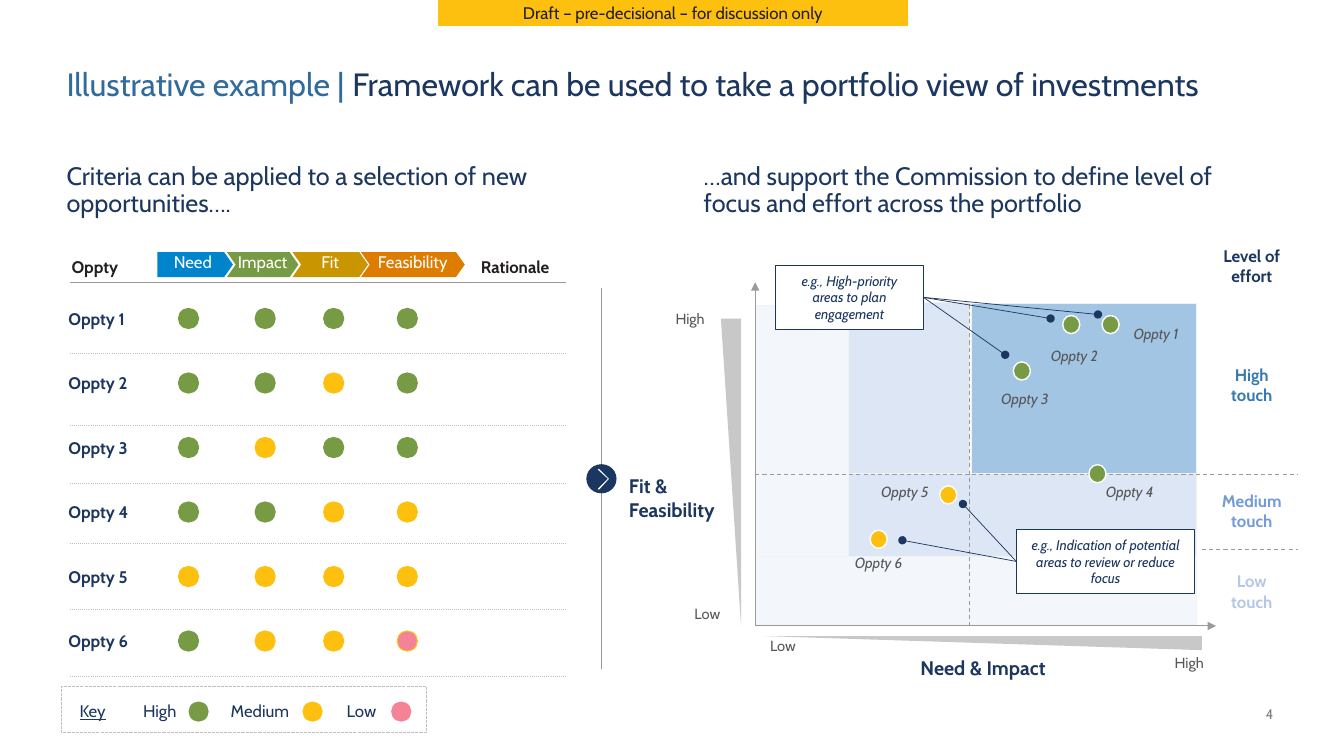
from lxml.etree import SubElement
from pptx import Presentation
from pptx.dml.color import RGBColor
from pptx.enum.dml import MSO_LINE
from pptx.enum.shapes import MSO_CONNECTOR, MSO_SHAPE as SHAPE
from pptx.enum.text import MSO_ANCHOR as ANCHOR, MSO_AUTO_SIZE, PP_ALIGN as ALIGN
from pptx.oxml import parse_xml
from pptx.oxml.ns import nsdecls, qn
from pptx.util import Pt

PX = 9144  # 100 px to the inch
FONT = "Cabin"
NAVY = RGBColor(0x1B, 0x36, 0x5F)
BLUE = RGBColor(0x30, 0x6B, 0x9C)
INK = RGBColor(0x23, 0x1F, 0x20)
WHITE = RGBColor(0xFF, 0xFF, 0xFF)
GREEN = RGBColor(0x77, 0x9A, 0x44)
YELLOW = RGBColor(0xFE, 0xC0, 0x0F)
PINK = RGBColor(0xF6, 0x82, 0x98)
GRAY = RGBColor(0x57, 0x57, 0x57)
PAGE_GRAY = RGBColor(0x80, 0x80, 0x80)
AXIS = RGBColor(0x9A, 0x9A, 0x9A)
DOTTED = RGBColor(0xBF, 0xBF, 0xBF)
WEDGE = RGBColor(0xC8, 0xC8, 0xC8)
ZONE_EDGE = RGBColor(0xF2, 0xF2, 0xF2)
HIGH_ZONE = RGBColor(0xA1, 0xC5, 0xE2)
MEDIUM_ZONE = RGBColor(0xDC, 0xE6, 0xF5)
LOW_ZONE = RGBColor(0xF3, 0xF6, 0xFB)
HIGH_TOUCH = RGBColor(0x36, 0x79, 0xB0)
MEDIUM_TOUCH = RGBColor(0x72, 0x9B, 0xD8)
LOW_TOUCH = RGBColor(0xB4, 0xC7, 0xE6)
NEED_BLUE = RGBColor(0x00, 0x84, 0xCB)
FIT_GOLD = RGBColor(0xC9, 0x95, 0x01)
FEASIBLE_ORANGE = RGBColor(0xDE, 0x7C, 0x00)

deck = Presentation()
deck.slide_width, deck.slide_height = 1333 * PX, 750 * PX
page = deck.slides.add_slide(deck.slide_layouts[5])


def draw(kind, at, text="", fill=None, line=None, weight=0.75, color=NAVY, size=12,
         align=ALIGN.LEFT, anchor=ANCHOR.MIDDLE, inset=True, spacing=None, **font):
    """Add a preset shape, or a text box when kind is None; at is in px."""
    bounds = [value * PX for value in at]
    if kind is None:
        box = page.shapes.add_textbox(*bounds)
    else:
        box = page.shapes.add_shape(kind, *bounds)
        box.shadow.inherit = False
        for part, paint in ((box.fill, fill), (box.line.fill, line)):
            if paint is None:
                part.background()
            else:
                part.solid()
                part.fore_color.rgb = paint
        box.line.width = Pt(weight)
    if text:
        frame = box.text_frame
        frame.word_wrap, frame.vertical_anchor = True, anchor
        if not inset:
            frame.margin_left = frame.margin_right = 0
            frame.margin_top = frame.margin_bottom = 0
        para = frame.paragraphs[0]
        para.alignment, para.line_spacing = align, spacing
        span = para.add_run()
        span.text = text
        span.font.color.rgb = color
        for name, value in {"name": FONT, "size": Pt(size), **font}.items():
            setattr(span.font, name, value)
    return box


def connect(start, end, color=AXIS, weight=0.75, dash=None, head=None, tail=None):
    link = page.shapes.add_connector(MSO_CONNECTOR.STRAIGHT, *[v * PX for v in start + end])
    link.line.color.rgb = color
    link.line.width = Pt(weight)
    if dash:
        link.line.dash_style = dash
    properties = link.element.spPr
    for tag, form in (("a:headEnd", head), ("a:tailEnd", tail)):
        if form:
            SubElement(properties.find(qn("a:ln")), qn(tag), type=form)
    SubElement(properties, qn("a:effectLst"))
    return link


# Title and headings
title = page.shapes.title
title.left, title.top, title.width, title.height = [v * PX for v in (66, 68, 1285, 35)]
frame = title.text_frame
title_format = {"margin_left": 0, "margin_right": 0, "margin_top": 0, "margin_bottom": 0,
                "word_wrap": True, "auto_size": MSO_AUTO_SIZE.NONE, "vertical_anchor": ANCHOR.TOP}
for name, value in title_format.items():
    setattr(frame, name, value)
para = frame.paragraphs[0]
para.alignment, para.line_spacing = ALIGN.LEFT, 0.9
for text, color in (("Illustrative example | ", BLUE),
                    ("Framework can be used to take a portfolio view of investments", NAVY)):
    span = para.add_run()
    span.text = text
    span.font.name, span.font.size, span.font.color.rgb = FONT, Pt(23), color

draw(SHAPE.RECTANGLE, (435, 0, 465, 25), "Draft – pre-decisional – for discussion only",
     YELLOW, YELLOW, color=INK, align=ALIGN.CENTER)
for at, text in (((66, 162, 495, 55), "Criteria can be applied to a selection of new opportunities…."),
                 ((698, 162, 533, 55), "…and support the Commission to define level of focus "
                                       "and effort across the portfolio")):
    draw(None, at, text, size=18, anchor=ANCHOR.TOP, inset=False, spacing=0.9)
draw(None, (1221, 700, 42, 17), "4", color=PAGE_GRAY, size=10, align=ALIGN.RIGHT,
     anchor=ANCHOR.BOTTOM, inset=False)

# Opportunity table
widths = (100, 71, 69, 69, 93, 90)
heights = (30, 71, 71, 58, 59, 66, 66)
holder = page.shapes.add_table(7, 6, 69 * PX, 250 * PX, sum(widths) * PX, sum(heights) * PX)
table = holder.table
table.first_row = table.horz_banding = False
holder.element.find(".//" + qn("a:tableStyleId")).text = "{2D5ABB26-0587-4C30-8999-92F81FD0307C}"
for column, width in zip(table.columns, widths):
    column.width = width * PX
headings = {0: "Oppty", 5: "Rationale"}
for index, (row, height) in enumerate(zip(table.rows, heights)):
    row.height = height * PX
    color, dash = (DOTTED, "sysDot") if index else (AXIS, "solid")
    for place, cell in enumerate(row.cells):
        cell.fill.background()
        cell.vertical_anchor = ANCHOR.MIDDLE
        cell.margin_left = (6 if place == 5 else 2) * PX
        cell.margin_right = cell.margin_top = cell.margin_bottom = 2 * PX
        cell.fill._xPr.insert(0, parse_xml(
            f'<a:lnB {nsdecls("a")} w="12700"><a:solidFill><a:srgbClr val="{color}"/></a:solidFill>'
            f'<a:prstDash val="{dash}"/></a:lnB>'))
        para = cell.text_frame.paragraphs[0]
        if index == 0 and place in headings:
            span = para.add_run()
            span.text = headings[place]
            span.font.color.rgb = INK
            for name, value in {"name": FONT, "size": Pt(12), "bold": True}.items():
                setattr(span.font, name, value)
        else:
            SubElement(para._p, qn("a:endParaRPr"), sz="1200")

for kind, left, width, text, fill in (
        (SHAPE.PENTAGON, 156, 75, "Need", NEED_BLUE), (SHAPE.CHEVRON, 225, 71, "Impact", GREEN),
        (SHAPE.CHEVRON, 290, 75, "Fit", FIT_GOLD),
        (SHAPE.CHEVRON, 358, 103, "Feasibility", FEASIBLE_ORANGE)):
    step = draw(kind, (left, 250, width, 25), text, fill, color=WHITE, align=ALIGN.CENTER,
                anchor=ANCHOR.TOP, inset=False)
    step.adjustments[0] = 0.35

levels = {"H": (GREEN, GREEN), "M": (YELLOW, YELLOW), "L": (PINK, YELLOW)}
for index, ratings in enumerate(("HHHH", "HHMH", "HMHH", "HHMM", "MMMM", "HMML")):
    top = 299 + 64 * index
    draw(SHAPE.RECTANGLE, (58, top, 101, 34), f"Oppty {index + 1}", WHITE, WHITE, bold=True)
    for left, rating in zip((177, 253, 321, 394), ratings):
        fill, rim = levels[rating]
        draw(SHAPE.OVAL, (left, top + 7, 20, 20), fill=fill, line=rim)

# Key
key = draw(SHAPE.RECTANGLE, (61, 681, 362, 46), line=DOTTED)
key.line.dash_style = MSO_LINE.SQUARE_DOT
draw(None, (69, 688, 101, 34), "Key", underline=True)
for left, text, dot, fill in ((132, "High", 187, GREEN), (219, "Medium", 300, YELLOW),
                              (334, "Low", 388, PINK)):
    draw(None, (left, 688, 101, 34), text)
    draw(SHAPE.OVAL, (dot, 696, 20, 20), fill=fill)

# Divider
connect((597, 286), (597, 664), weight=0.64)
draw(SHAPE.OVAL, (582, 461, 29, 28), fill=NAVY, line=NAVY, weight=0.64)
outline = page.shapes.build_freeform(594, 486, scale=PX)
outline.add_line_segments([(593, 485), (603, 475), (593, 466), (594, 465), (604, 475)])
arrow = outline.convert_to_shape()
arrow.shadow.inherit = False
arrow.fill.solid()
arrow.fill.fore_color.rgb = WHITE
arrow.line.fill.background()

# Portfolio map
for at, fill in (((964, 301, 223, 171), HIGH_ZONE), ((842, 300, 120, 170), MEDIUM_ZONE),
                 ((842, 470, 345, 85), MEDIUM_ZONE), ((749, 303, 93, 249), LOW_ZONE),
                 ((749, 552, 438, 68), LOW_ZONE)):
    draw(SHAPE.RECTANGLE, at, fill=fill, line=ZONE_EDGE)
for end in ((1206, 621), (749, 280)):
    connect((749, 621), end, tail="triangle")
for start, end in (((962, 302), (962, 621)), ((749, 471), (1287, 471)), ((1192, 545), (1287, 545))):
    connect(start, end, dash=MSO_LINE.DASH)
for at in ((715, 316, 20, 305), (757, 631, 435, 14)):
    draw(SHAPE.RIGHT_TRIANGLE, at, fill=WEDGE).rotation = 180
draw(None, (886, 639, 178, 47), "Need & Impact", size=14, align=ALIGN.CENTER, bold=True)
draw(None, (614, 470, 133, 47), "Fit & Feasibility", size=14, bold=True)
for at, text in (((630, 293, 109, 47), "High"), ((647, 585, 109, 47), "Low"),
                 ((1152, 645, 55, 25), "High"), ((722, 617, 109, 47), "Low")):
    draw(None, at, text, color=GRAY, size=10.5, align=ALIGN.CENTER)
for top, height, text, color in ((246, 36, "Level of effort", NAVY), (302, 160, "High touch", HIGH_TOUCH),
                                 (470, 74, "Medium touch", MEDIUM_TOUCH),
                                 (552, 69, "Low touch", LOW_TOUCH)):
    draw(None, (1199, top, 85, height), text, color=color, align=ALIGN.CENTER, bold=True)

# Callouts
for at, text, side, anchor_point, targets in (
        ((769, 263, 147, 64), "e.g., High-priority areas to plan engagement", 3, (916, 295),
         ((1042, 316), (997, 352), (1089, 312))),
        ((1008, 525, 177, 64), "e.g., Indication of potential areas to review or reduce focus", 1,
         (1008, 557), ((895, 536), (955, 500)))):
    callout = draw(SHAPE.RECTANGLE, at, text, WHITE, NAVY, size=10, align=ALIGN.CENTER, italic=True)
    for target in targets:
        connect(target, anchor_point, NAVY, 0.5, head="oval").end_connect(callout, side)

# Opportunities on the map
for number, dot, fill, label in (
        (1, (1093, 313), GREEN, (1092, 313, 109, 37)), (2, (1054, 313), GREEN, (1011, 334, 109, 37)),
        (3, (1005, 359), GREEN, (962, 377, 109, 37)), (4, (1080, 461), GREEN, (1084, 459, 73, 57)),
        (5, (932, 482), YELLOW, (858, 459, 79, 57)), (6, (863, 526), YELLOW, (817, 540, 109, 37))):
    draw(SHAPE.OVAL, dot + (17, 18), fill=fill, line=WHITE, weight=1)
    draw(None, label, f"Oppty {number}", color=GRAY, size=10.5, align=ALIGN.CENTER, italic=True)

deck.save("out.pptx")
